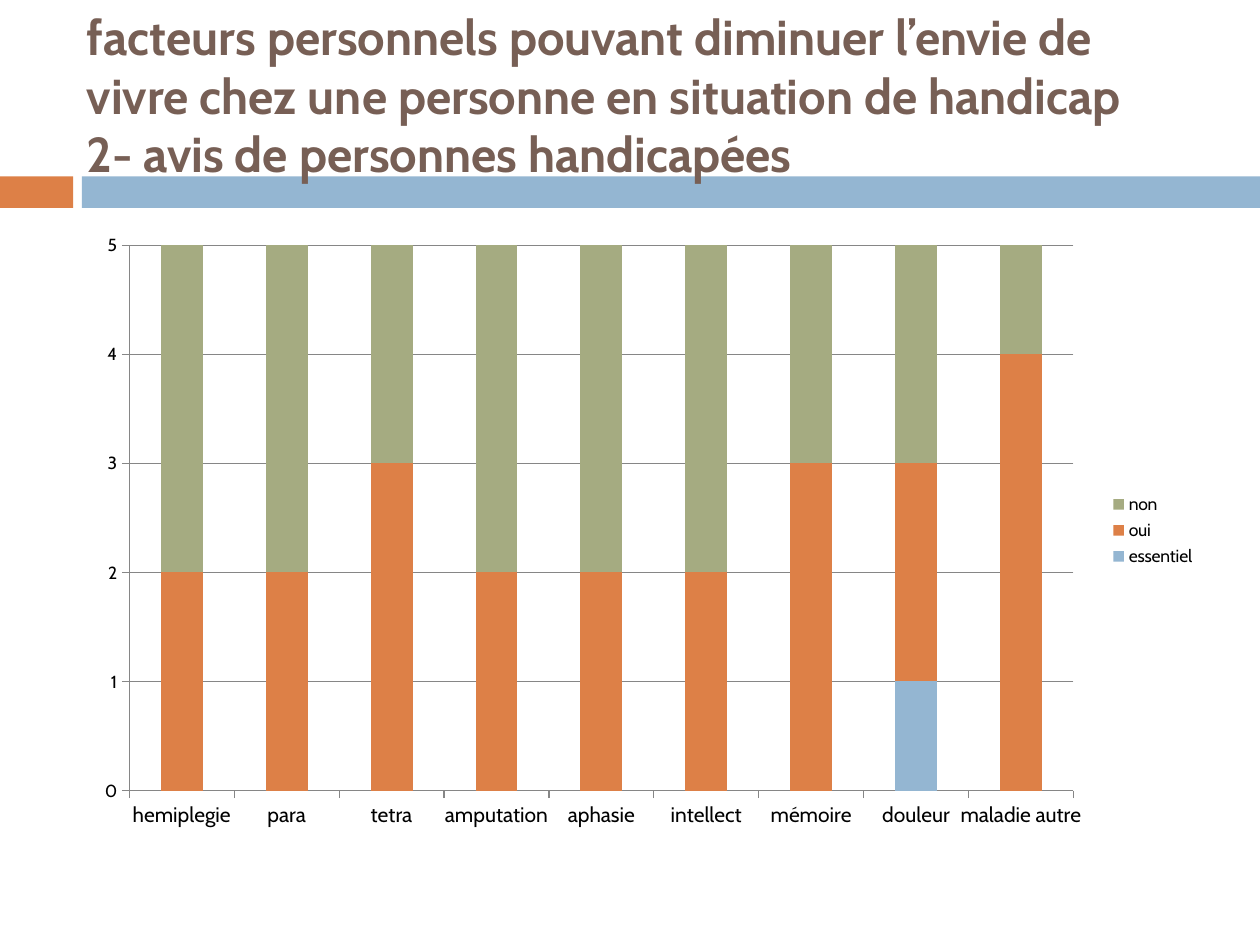
from dataclasses import dataclass

from lxml import etree
from pptx import Presentation
from pptx import util as u
from pptx.chart.data import CategoryChartData
from pptx.dml.color import RGBColor
from pptx.enum import chart as ch, shapes, text

W, H = 10, 7.5


@dataclass(frozen=True)
class Theme:
    font: str = "Cabin"
    title: str = "775F55"
    ink: str = "000000"
    grid: str = "868686"
    blue: str = "94B6D2"
    orange: str = "DD8047"
    green: str = "A5AB81"
    title_size: int = 28
    label_size: int = 12
    small_size: int = 10


THEME = Theme()
TITLE = ("facteurs personnels pouvant diminuer l’envie de vivre chez une "
         "personne en situation de handicap\v2- avis de personnes handicapées")
CATEGORIES = ["hemiplegie", "para", "tetra", "amputation", "aphasie",
              "intellect", "mémoire", "douleur", "maladie autre"]
SERIES = [
    ("essentiel", (0, 0, 0, 0, 0, 0, 0, 1, 0), THEME.blue),
    ("oui", (2, 2, 3, 2, 2, 2, 3, 2, 4), THEME.orange),
    ("non", (3, 3, 2, 3, 3, 3, 2, 2, 1), THEME.green),
]


def rgb(value):
    return RGBColor.from_string(value)


def inches(box):
    return [u.Inches(n) for n in box]


def style_font(font, size, color=THEME.ink, bold=False):
    font.name, font.size, font.bold = THEME.font, u.Pt(size), bold
    font.color.rgb = rgb(color)


def add_band(slide, box, gap=0.07, lead=0.58):
    """Orange block at the left, blue bar over the rest of the width."""
    x, y, w, h = box
    parts = [(x, lead, THEME.orange),
             (x + lead + gap, w - lead - gap, THEME.blue)]
    for left, width, color in parts:
        sp = slide.shapes.add_shape(shapes.MSO_SHAPE.RECTANGLE,
                                    *inches((left, y, width, h)))
        sp.shadow.inherit = False
        sp.fill.solid()
        sp.fill.fore_color.rgb = rgb(color)
        sp.line.fill.background()


def set_title(slide, box):
    sp = slide.shapes.title
    sp.left, sp.top, sp.width, sp.height = inches(box)
    tf = sp.text_frame
    tf.word_wrap = True
    tf.auto_size = text.MSO_AUTO_SIZE.NONE
    tf.vertical_anchor = text.MSO_ANCHOR.MIDDLE
    p = tf.paragraphs[0]
    p.text = TITLE
    p.alignment = text.PP_ALIGN.LEFT
    style_font(p.font, THEME.title_size, THEME.title, bold=True)


def set_plot_layout(chart, x, y, w, h):
    """Fix the inner plot area, as shares of the chart box."""
    plot_area = chart.plots[0]._element.getparent()
    ns = etree.QName(plot_area).namespace
    for old in plot_area.findall(f"{{{ns}}}layout"):
        plot_area.remove(old)
    layout = etree.Element(f"{{{ns}}}layout")
    manual = etree.SubElement(layout, f"{{{ns}}}manualLayout")
    settings = [("layoutTarget", "inner"), ("xMode", "edge"),
                ("yMode", "edge"), ("x", x), ("y", y), ("w", w), ("h", h)]
    for tag, value in settings:
        etree.SubElement(manual, f"{{{ns}}}{tag}", val=str(value))
    plot_area.insert(0, layout)


def add_opinion_chart(slide, box):
    data = CategoryChartData(number_format="#,##0")
    data.categories = CATEGORIES
    for name, values, _ in SERIES:
        data.add_series(name, values)
    chart = slide.shapes.add_chart(ch.XL_CHART_TYPE.COLUMN_STACKED,
                                   *inches(box), data).chart
    chart.has_title = False
    style_font(chart.font, THEME.small_size)

    # Stacked columns
    plot = chart.plots[0]
    plot.gap_width, plot.overlap = 150, 100
    plot.vary_by_categories = False
    for series, (_, _, color) in zip(plot.series, SERIES):
        series.format.fill.solid()
        series.format.fill.fore_color.rgb = rgb(color)

    # Axes and gridlines
    val, cat = chart.value_axis, chart.category_axis
    val.minimum_scale, val.maximum_scale, val.major_unit = 0, 5, 1
    val.has_major_gridlines = True
    val.tick_labels.number_format = "#,##0"
    val.tick_labels.number_format_is_linked = False
    style_font(val.tick_labels.font, THEME.small_size)
    style_font(cat.tick_labels.font, THEME.label_size)
    for axis in (val, cat):
        axis.major_tick_mark = ch.XL_TICK_MARK.OUTSIDE
        axis.minor_tick_mark = ch.XL_TICK_MARK.NONE
    for part in (val, cat, val.major_gridlines):
        part.format.line.color.rgb = rgb(THEME.grid)
        part.format.line.width = u.Pt(0.75)

    # Legend
    chart.has_legend = True
    chart.legend.position = ch.XL_LEGEND_POSITION.RIGHT
    chart.legend.include_in_layout = False
    style_font(chart.legend.font, THEME.small_size)
    set_plot_layout(chart, 0.04, 0.04, 0.84, 0.88)


def main():
    prs = Presentation()
    prs.slide_width, prs.slide_height = u.Inches(W), u.Inches(H)
    s = prs.slides.add_slide(prs.slide_layouts.get_by_name("Title Only"))
    add_band(s, (0, 1.4, W, 0.25))
    set_title(s, (0.59, 0.21, 8.92, 1.08))
    # Draw the title in front of the band
    s.shapes._spTree.append(s.shapes.title._element)
    add_opinion_chart(s, (0.67, 1.75, 8.92, 4.92))
    prs.save("out.pptx")


if __name__ == "__main__":
    main()
